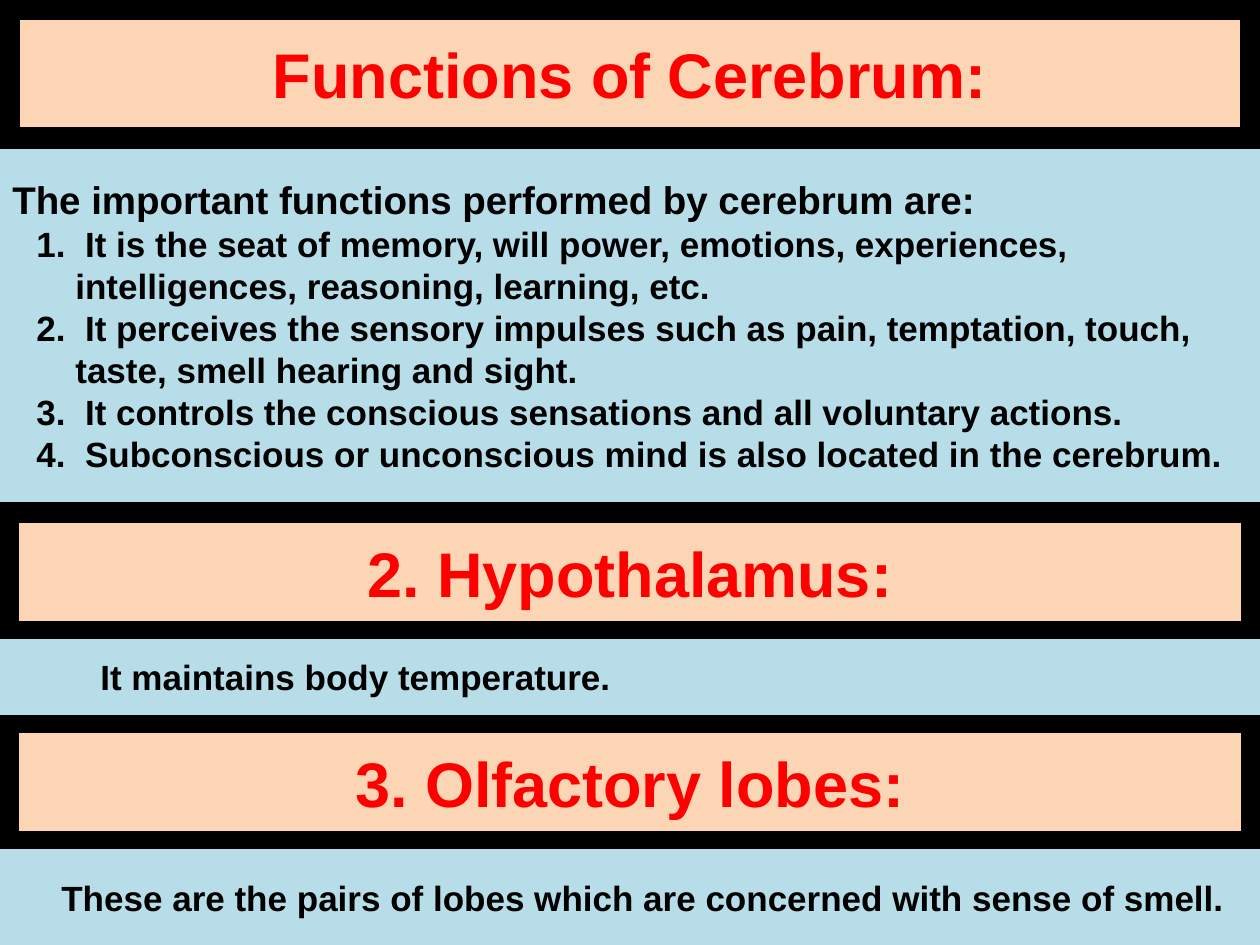
from lxml import etree
from pptx import Presentation, util as u
from pptx.dml.color import RGBColor
from pptx.enum import shapes, text
from pptx.oxml.ns import qn

PX = 914400 // 126
RED, BLACK, PEACH, BLUE = "FF0000", "000000", "FCD5B5", "B7DEE8"
RECT, FRAME = shapes.MSO_SHAPE.RECTANGLE, shapes.MSO_SHAPE.FRAME

deck = Presentation()
deck.slide_width, deck.slide_height = u.Inches(10), u.Inches(7.5)
slide = deck.slides.add_slide(deck.slide_layouts[6])


def box(kind, top, high, fill, edge, width):
    shape = slide.shapes.add_shape(kind, 0, top * PX, deck.slide_width, high * PX)
    shape.shadow.inherit = False
    shape.fill.solid()
    shape.fill.fore_color.rgb = RGBColor.from_string(fill)
    shape.line.color.rgb = RGBColor.from_string(edge)
    shape.line.width = u.Pt(width)
    frame = shape.text_frame
    frame.word_wrap = True
    frame.vertical_anchor = text.MSO_ANCHOR.MIDDLE
    return frame


def write(para, words, size, color=BLACK, align=text.PP_ALIGN.LEFT, left=0, hang=0):
    para.alignment = align
    props = para._p.get_or_add_pPr()
    props.set("marL", str(left * PX))
    props.set("indent", str(-hang * PX))
    if hang:
        etree.SubElement(props, qn("a:buFont"), typeface="+mj-lt")
        etree.SubElement(props, qn("a:buAutoNum"), type="arabicPeriod")
    run = para.add_run()
    run.text = words
    run.font.name, run.font.size, run.font.bold = "Arial", u.Pt(size), True
    run.font.color.rgb = RGBColor.from_string(color)


# Peach backdrops
box(RECT, 0, 945, PEACH, "98B955", 0.75)
box(RECT, 147, 798, PEACH, "4B7EBC", 0.75)

# Blue panel with the numbered functions
body = box(RECT, 147, 357, BLUE, BLUE, 0.75)
write(body.paragraphs[0], "The important functions performed by cerebrum are:", 22)
for item in (
    " It is the seat of memory, will power, emotions, experiences, "
    "intelligences, reasoning, learning, etc.",
    " It perceives the sensory impulses such as pain, temptation, touch, "
    "taste, smell hearing and sight.",
    " It controls the conscious sensations and all voluntary actions.",
    " Subconscious or unconscious mind is also located in the cerebrum.",
):
    write(body.add_paragraph(), item, 20, left=63, hang=39)

# Framed headings
for top, high, title in (
    (0, 147, "Functions of Cerebrum:"),
    (504, 136, "2. Hypothalamus:"),
    (714, 136, "3. Olfactory lobes:"),
):
    head = box(FRAME, top, high, BLACK, BLACK, 2)
    write(head.paragraphs[0], title, 36, RED, text.PP_ALIGN.CENTER)

# Single-line blue panels
for top, high, left, note in (
    (640, 74, 88, "It maintains body temperature."),
    (850, 95, 49, "These are the pairs of lobes which are concerned with sense of smell."),
):
    panel = box(RECT, top, high, BLUE, BLUE, 0.75)
    write(panel.paragraphs[0], note, 20, left=left)

deck.save("out.pptx")
